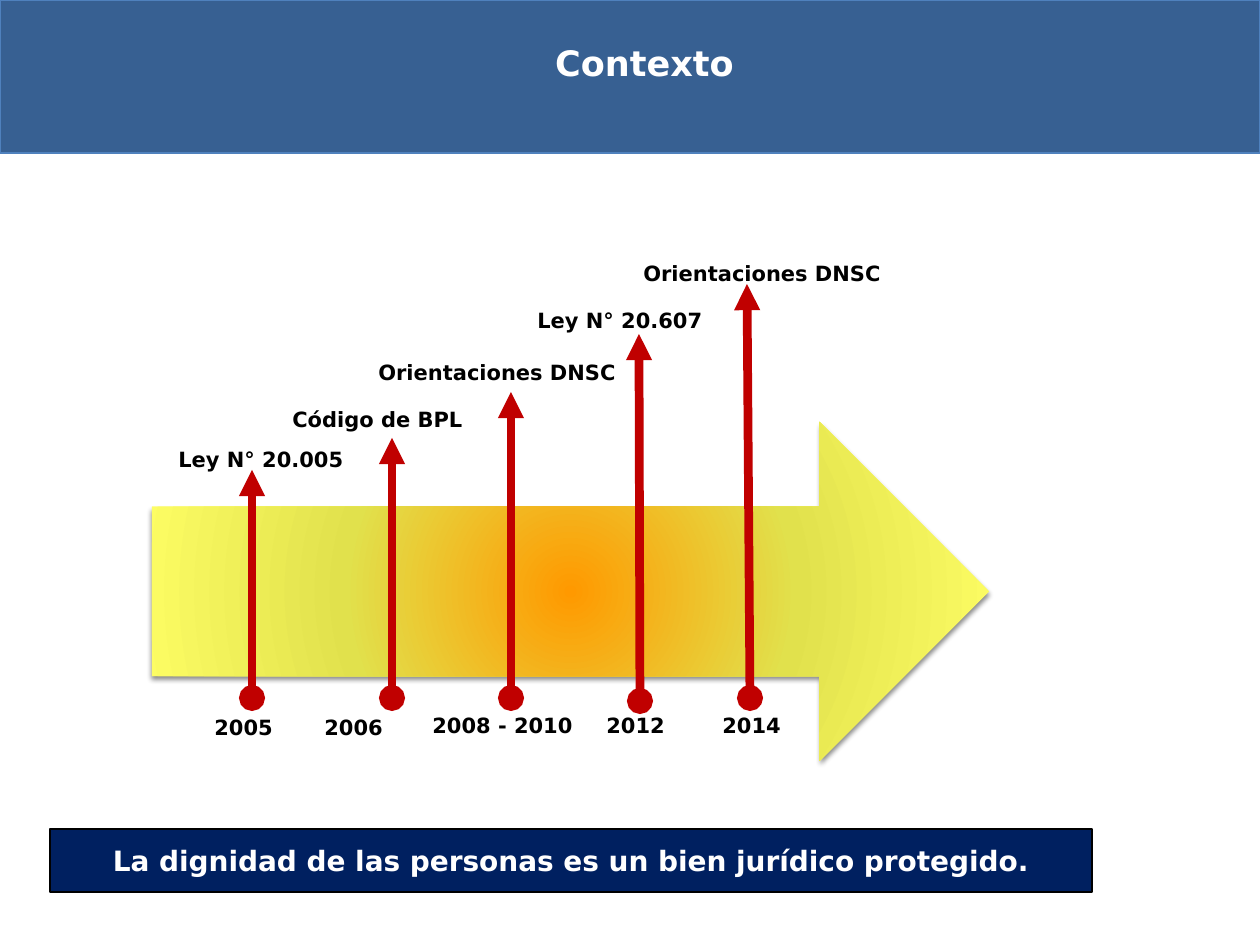
import pptx
import pptx.util
import pptx.oxml
import pptx.oxml.ns
import pptx.dml.color
import pptx.enum.shapes
import pptx.enum.text

SCALE = 914400 / 126
NS = pptx.oxml.ns.nsdecls("a")
KINDS = pptx.enum.shapes.MSO_SHAPE
ALIGN = pptx.enum.text.PP_ALIGN
ANCHOR = pptx.enum.text.MSO_ANCHOR
COLORS = {
    "banner": "376092", "banner_line": "4F81BD", "marker": "C00000",
    "footer": "002060", "black": "000000", "white": "FFFFFF",
    "core": "FF9900", "middle": "E1E14C", "edge": "FFFF66",
}


def color(name):
    return pptx.dml.color.RGBColor.from_string(COLORS[name])


def write(shape, text, size, ink, frame_format, para_format):
    frame = shape.text_frame
    for key, value in frame_format.items():
        setattr(frame, key, value)
    para = frame.paragraphs[0]
    for key, value in para_format.items():
        setattr(para, key, value)
    span = para.add_run()
    span.text = text
    font_format = {"name": "DejaVu Sans", "size": pptx.util.Pt(size), "bold": True}
    for key, value in font_format.items():
        setattr(span.font, key, value)
    span.font.color.rgb = color(ink)


deck = pptx.Presentation()
deck.slide_width = pptx.util.Inches(10)
deck.slide_height = pptx.util.Inches(7.5)
page = deck.slides.add_slide(deck.slide_layouts[6])

bars = {}
for name, bounds, edge, width in [
    ("banner", (0, 0, 1260, 153), "banner_line", 1.5),
    ("footer", (50, 829, 1042, 63), "black", 0.75),
]:
    bar = page.shapes.add_shape(KINDS.RECTANGLE, *[round(n * SCALE) for n in bounds])
    bar.shadow.inherit = False
    bar.fill.solid()
    bar.fill.fore_color.rgb = color(name)
    bar.line.color.rgb = color(edge)
    bar.line.width = pptx.util.Pt(width)
    bars[name] = bar

write(bars["footer"], "La dignidad de las personas es un bien jurídico protegido.", 16, "white",
      {"word_wrap": True, "vertical_anchor": ANCHOR.MIDDLE}, {"alignment": ALIGN.CENTER})

arrow = page.shapes.add_shape(KINDS.UP_ARROW, *[round(n * SCALE) for n in (401, 173, 339, 837)])
arrow.rotation = 90
arrow.shadow.inherit = False
arrow.line.fill.background()
stops = "".join(
    f'<a:gs pos="{pos}"><a:srgbClr val="{COLORS[name]}"/></a:gs>'
    for pos, name in [(0, "core"), (50000, "middle"), (100000, "edge")]
)
gradient = pptx.oxml.parse_xml(
    f'<a:gradFill {NS} rotWithShape="1"><a:gsLst>{stops}</a:gsLst><a:path path="circle">'
    '<a:fillToRect l="50000" t="50000" r="50000" b="50000"/></a:path></a:gradFill>'
)
properties = arrow._element.spPr
properties.insert(2, gradient)
properties.find(pptx.oxml.ns.qn("a:effectLst")).append(pptx.oxml.parse_xml(
    f'<a:outerShdw {NS} blurRad="38100" dist="25400" dir="5400000" rotWithShape="0">'
    f'<a:srgbClr val="{COLORS["black"]}"><a:alpha val="45000"/></a:srgbClr></a:outerShdw>'
))

milestones = [
    ((252, 698, 252, 470), ("Ley N° 20.005", 166, 440, 194), ("2005", 202, 708, 86)),
    ((392, 698, 392, 438), ("Código de BPL", 280, 400, 195), ("2006", 312, 708, 86)),
    ((511, 698, 511, 392), ("Orientaciones DNSC", 366, 353, 263), ("2008 - 2010", 420, 706, 170)),
    ((640, 701, 639, 334), ("Ley N° 20.607", 525, 301, 194), ("2012", 594, 706, 86)),
    ((750, 698, 747, 284), ("Orientaciones DNSC", 631, 254, 263), ("2014", 710, 706, 86)),
]
for ends, event, year in milestones:
    for text, left, top, width in (event, year):
        box = page.shapes.add_textbox(*[round(n * SCALE) for n in (left, top, width, 38)])
        write(box, text, 12, "black", {"word_wrap": False}, {"alignment": ALIGN.LEFT})
    stem = page.shapes.add_connector(
        pptx.enum.shapes.MSO_CONNECTOR.STRAIGHT, *[round(n * SCALE) for n in ends])
    stem.line.color.rgb = color("marker")
    stem.line.width = pptx.util.Pt(5)
    outline = stem.line._get_or_add_ln()
    for tag, kind in [("headEnd", "oval"), ("tailEnd", "triangle")]:
        outline.append(pptx.oxml.parse_xml(f'<a:{tag} {NS} type="{kind}"/>'))
    stem._element.spPr.append(pptx.oxml.parse_xml(f"<a:effectLst {NS}/>"))

title = page.shapes.add_textbox(*[round(n * SCALE) for n in (54, 42, 1181, 49)])
write(title, "Contexto", 20, "white", {"word_wrap": True},
      {"alignment": ALIGN.CENTER, "line_spacing": 0.85})

deck.save("out.pptx")
